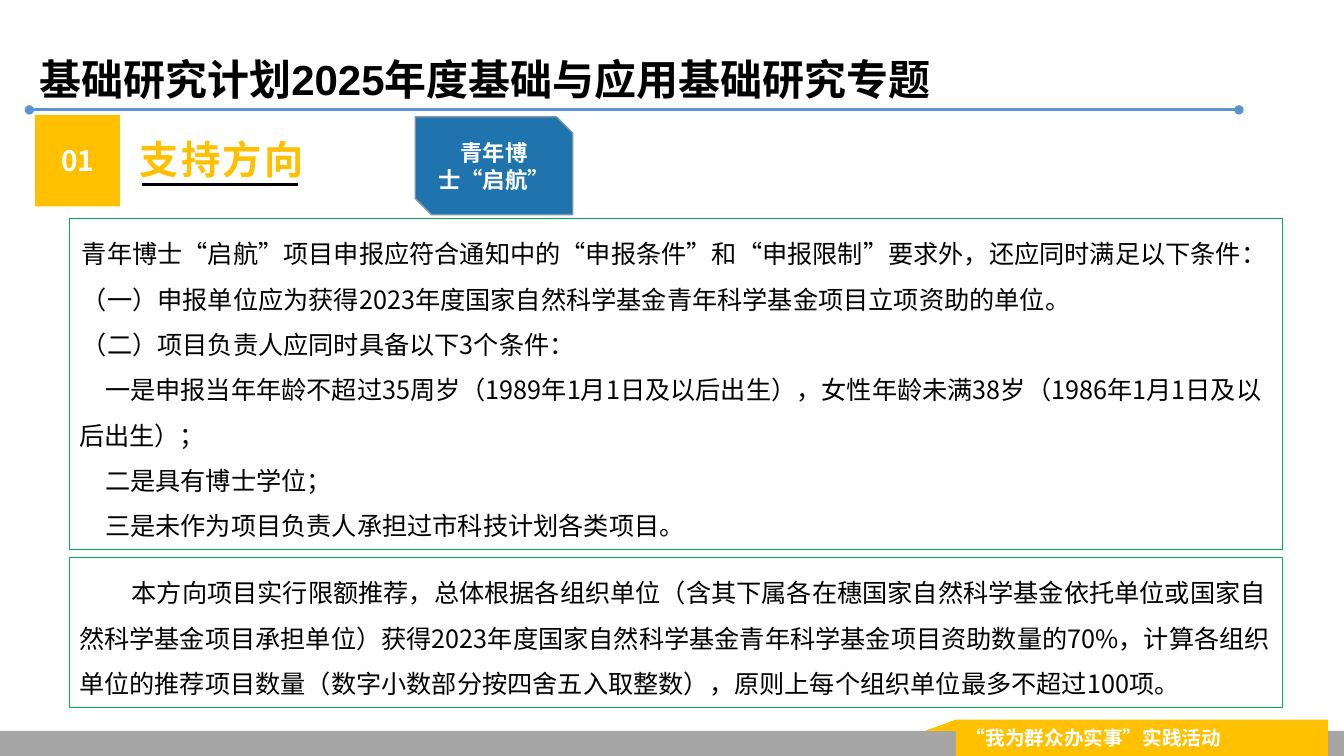
from lxml import etree
from pptx import Presentation
from pptx.dml.color import RGBColor
from pptx.enum.shapes import MSO_CONNECTOR, MSO_SHAPE
from pptx.enum.text import MSO_ANCHOR, PP_ALIGN
from pptx.oxml.ns import qn
from pptx.util import Pt

RECT = MSO_SHAPE.RECTANGLE
SNIPPED = MSO_SHAPE.SNIP_2_DIAG_RECTANGLE
TRIANGLE = MSO_SHAPE.RIGHT_TRIANGLE
STRAIGHT = MSO_CONNECTOR.STRAIGHT
TOP, MIDDLE = MSO_ANCHOR.TOP, MSO_ANCHOR.MIDDLE
LEFT, CENTER = PP_ALIGN.LEFT, PP_ALIGN.CENTER

COLORS = {
    "black": "000000", "white": "FFFFFF", "gold": "FFC000", "grey": "A6A6A6",
    "blue": "1F74AD", "blue_edge": "7C92A9", "rule": "5B94CE", "green": "00B050",
}
RGB = {name: RGBColor.from_string(value) for name, value in COLORS.items()}
SANS = "Noto Sans CJK SC"

prs = Presentation()
prs.slide_width, prs.slide_height = Pt(960), Pt(540)
s = prs.slides.add_slide(prs.slide_layouts[6])


def add_box(kind, x, y, w, h, fill=None, edge=None, edge_width=0.75):
    sp = s.shapes.add_shape(kind, Pt(x), Pt(y), Pt(w), Pt(h))
    sp.shadow.inherit = False
    if fill:
        sp.fill.solid()
        sp.fill.fore_color.rgb = RGB[fill]
    else:
        sp.fill.background()
    if edge:
        sp.line.color.rgb = RGB[edge]
        sp.line.width = Pt(edge_width)
    else:
        sp.line.fill.background()
    return sp


def write(sp, lines, size, color, font=SANS, bold=True, align=LEFT,
          anchor=MIDDLE, spacing=None):
    """Each line is a pair: first-line indent in points, text."""
    tf = sp.text_frame
    tf.word_wrap = True
    tf.vertical_anchor = anchor
    for i, (indent, text) in enumerate(lines):
        p = tf.paragraphs[0] if i == 0 else tf.add_paragraph()
        p.text = text
        p.alignment = align
        if spacing:
            p.line_spacing = spacing
        pPr = p._p.get_or_add_pPr()
        pPr.set("marL", "0")
        pPr.set("indent", str(Pt(indent)))
        p.font.size = Pt(size)
        p.font.bold = bold
        p.font.color.rgb = RGB[color]
        p.font.name = font
        if font == SANS:
            etree.SubElement(pPr.find(qn("a:defRPr")), qn("a:ea"), typeface=font)
    return tf


# Rule under the title and underline of the section heading
for x1, x2, y, color, dots in [(21, 885, 78.5, "rule", True),
                               (101.5, 213, 131.8, "black", False)]:
    line = s.shapes.add_connector(STRAIGHT, Pt(x1), Pt(y), Pt(x2), Pt(y))
    line.line.color.rgb = RGB[color]
    line.line.width = Pt(2.25)
    if dots:
        for end in ("a:headEnd", "a:tailEnd"):
            etree.SubElement(line.line._get_or_add_ln(), qn(end), type="oval")
    etree.SubElement(line._element.spPr, qn("a:effectLst"))

# Title
title = s.shapes.add_textbox(Pt(21), Pt(16.5), Pt(770), Pt(62))
write(title, [(0, "基础研究计划2025年度基础与应用基础研究专题")], 30, "black",
      font="Arial", anchor=TOP, spacing=1.5)

# Section number and heading
number = add_box(RECT, 25.2, 82, 60.5, 65.5, fill="gold")
write(number, [(0, "01")], 20, "white", align=CENTER)
heading = s.shapes.add_textbox(Pt(91.5), Pt(93), Pt(200), Pt(57))
tf = write(heading, [(0, "支持方向")], 28, "gold", font="Arial", anchor=TOP)
tf.margin_left = Pt(7.9)
tf.paragraphs[0]._p.pPr.find(qn("a:defRPr")).set("spc", "200")

# Programme tag
tag = add_box(SNIPPED, 296.6, 83.5, 112.5, 69.8, "blue", "blue_edge", 1)
write(tag, [(0, "青年博士“启航”")], 16, "white", align=CENTER)

# Conditions and quota
conditions = [
    (2, "青年博士“启航”项目申报应符合通知中的“申报条件”和“申报限制”要求外，还应同时满足以下条件："),
    (2, "（一）申报单位应为获得2023年度国家自然科学基金青年科学基金项目立项资助的单位。"),
    (2, "（二）项目负责人应同时具备以下3个条件："),
    (18.5, "一是申报当年年龄不超过35周岁（1989年1月1日及以后出生），女性年龄未满38岁（1986年1月1日及以后出生）；"),
    (18.5, "二是具有博士学位；"),
    (18.5, "三是未作为项目负责人承担过市科技计划各类项目。"),
]
quota = [(37.5, "本方向项目实行限额推荐，总体根据各组织单位（含其下属各在穗国家自然科学基金依托单位或国家自然科学基金项目承担单位）获得2023年度国家自然科学基金青年科学基金项目资助数量的70%，计算各组织单位的推荐项目数量（数字小数部分按四舍五入取整数），原则上每个组织单位最多不超过100项。")]
for y, h, lines in [(156, 236.5, conditions), (398.3, 107, quota)]:
    panel = add_box(RECT, 49.5, y, 866.5, h, edge="green")
    write(panel, lines, 18, "black", bold=False, anchor=TOP, spacing=1.5)

# Footer band
add_box(RECT, 0, 522, 960, 18, fill="grey")
banner = add_box(RECT, 682.8, 514, 265.7, 26, fill="gold")
write(banner, [(0, "“我为群众办实事”实践活动")], 14, "white")
fold = add_box(TRIANGLE, 661, 514, 22, 8, fill="gold")
fold._element.spPr.find(qn("a:xfrm")).set("flipH", "1")

prs.save("out.pptx")
